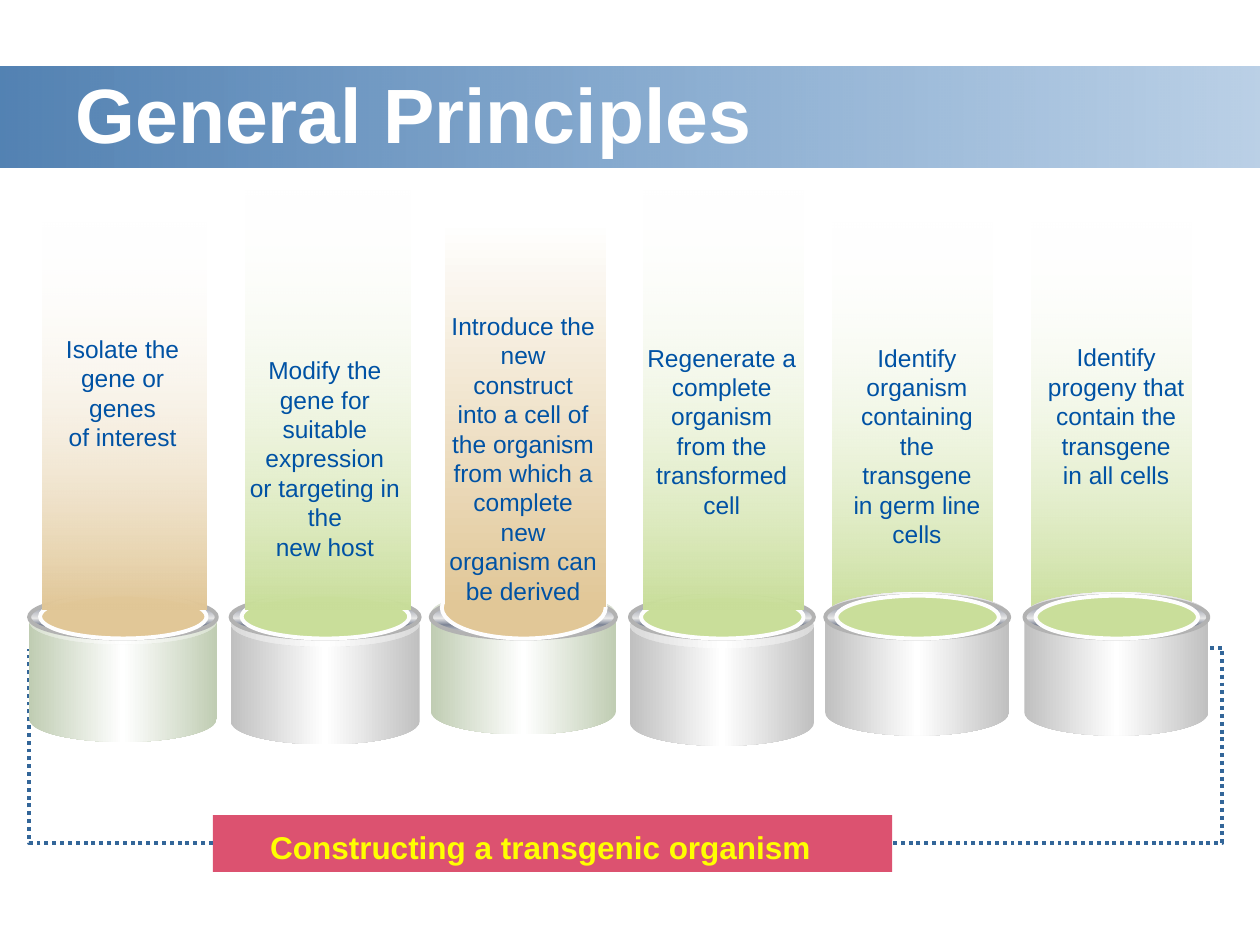
"""Build the slide on the general principles of constructing a transgenic organism."""
from dataclasses import dataclass

from lxml import etree
from pptx import Presentation
from pptx.dml.color import RGBColor
from pptx.enum import dml, shapes, text
from pptx.oxml import ns
from pptx.util import Pt

WHITE = RGBColor(0xFF, 0xFF, 0xFF)
RIM = RGBColor(0xFE, 0xFE, 0xFE)
NAVY = RGBColor(0x00, 0x47, 0x8F)
BLUE = RGBColor(0x00, 0x52, 0xA4)
DOT_BLUE = RGBColor(0x33, 0x66, 0x99)
ROSE = RGBColor(0xDC, 0x52, 0x70)
YELLOW = RGBColor(0xFF, 0xFF, 0x00)
GREEN = RGBColor(0xC9, 0xDE, 0x9A)
TAN = RGBColor(0xE1, 0xC7, 0x97)
SAGE = RGBColor(0xC0, 0xCD, 0xB3)
SILVER = RGBColor(0xC0, 0xC0, 0xC0)
PALE = RGBColor(0xE6, 0xE6, 0xE6)
STEEL = RGBColor(0x7D, 0x84, 0x96)
RING_EDGE = RGBColor(0xB2, 0xB2, 0xB2)

RIGHTWARD, DOWNWARD = 0, 270
RING_STOPS = [(0, PALE), (15, STEEL), (53, PALE), (68, STEEL), (93, PALE), (100, WHITE)]
CENTER = text.PP_ALIGN.CENTER


@dataclass
class Box:
    left: float
    top: float
    width: float
    height: float

    def lengths(self) -> list:
        return [Pt(v) for v in (self.left, self.top, self.width, self.height)]


@dataclass
class Step:
    left: float
    width: float
    can_top: float
    column_top: float
    column_bottom: float
    label_top: float
    label_height: float
    lines: list
    colour: RGBColor = GREEN
    can_colour: RGBColor = SILVER
    column_inset: float = 7.9
    cup_top: float = 340.4
    clear_top: bool = True
    column_behind: bool = False


STEPS = [
    Step(16.6, 107.3, 342, 126, 348.5, 187.2, 75,
         ["Isolate the gene or genes", "of interest"], TAN, SAGE, cup_top=339.8),
    Step(131.8, 108, 343.4, 108, 348.5, 199.4, 126,
         ["Modify the gene for", "suitable expression", "or targeting in the", "new host"],
         column_inset=8.6, cup_top=339.8),
    Step(246.2, 105.8, 337.7, 126, 347, 174.2, 177,
         ["Introduce the new construct", "into a cell of the organism",
          "from which a complete new", "organism can be derived"],
         TAN, SAGE, cup_top=329.8, clear_top=False),
    Step(360, 105.1, 344.2, 108, 348.5, 192.2, 109,
         ["Regenerate a complete", "organism from the", "transformed cell"]),
    Step(471.6, 105.1, 338.4, 126, 352.8, 192.2, 126,
         ["Identify organism", "containing the transgene", "in germ line cells"],
         column_inset=4.3, column_behind=True),
    Step(585.4, 105.1, 338.4, 126, 352.8, 192.2, 92,
         ["Identify progeny that", "contain the transgene", "in all cells"],
         column_inset=4.3, column_behind=True),
]


def add_filled(slide, kind, box: Box, fill, angle=RIGHTWARD, edge=None):
    """Draw a preset shape filled with a colour or with (position, colour[, alpha]) stops."""
    shape = slide.shapes.add_shape(kind, *box.lengths())
    shape.shadow.inherit = False
    if isinstance(fill, RGBColor):
        shape.fill.solid()
        shape.fill.fore_color.rgb = fill
    else:
        shape.fill.gradient()
        shape.fill.gradient_angle = angle
        stops = shape._element.spPr.find(".//" + ns.qn("a:gsLst"))
        for old in list(stops):
            stops.remove(old)
        for position, colour, *alpha in fill:
            stop = etree.SubElement(stops, ns.qn("a:gs"), pos=str(position * 1000))
            srgb = etree.SubElement(stop, ns.qn("a:srgbClr"), val=str(colour))
            for percent in alpha:
                etree.SubElement(srgb, ns.qn("a:alpha"), val=str(percent * 1000))
    if edge is None:
        shape.line.fill.background()
    else:
        shape.line.color.rgb = edge
        shape.line.width = Pt(2.25)
    return shape


def write(frame, lines: list, *, size: float, colour: RGBColor, bold=False, align=CENTER,
          anchor=text.MSO_ANCHOR.TOP, fit=text.MSO_AUTO_SIZE.SHAPE_TO_FIT_TEXT) -> None:
    """Put one paragraph per line into a text frame."""
    frame.word_wrap = True
    frame.auto_size = fit
    frame.vertical_anchor = anchor
    for index, line in enumerate(lines):
        paragraph = frame.paragraphs[0] if index == 0 else frame.add_paragraph()
        paragraph.alignment = align
        run = paragraph.add_run()
        run.text = line
        run.font.name = "Arial"
        run.font.size = Pt(size)
        run.font.bold = bold
        run.font.color.rgb = colour


def add_dotted_elbow(slide, start: tuple, end: tuple, preset: str, bend=None) -> None:
    """Draw a dotted bent connector between two points."""
    elbow = slide.shapes.add_connector(
        shapes.MSO_CONNECTOR.ELBOW, *(Pt(v) for v in start + end))
    elbow.line.color.rgb = DOT_BLUE
    elbow.line.width = Pt(2.25)
    elbow.line.dash_style = dml.MSO_LINE.ROUND_DOT
    properties = elbow._element.spPr
    etree.SubElement(properties, ns.qn("a:effectLst"))
    geometry = properties.find(ns.qn("a:prstGeom"))
    geometry.set("prst", preset)
    if bend is not None:
        guides = geometry.find(ns.qn("a:avLst"))
        etree.SubElement(guides, ns.qn("a:gd"), name="adj1", fmla=f"val {bend}")


def add_column(slide, step: Step) -> None:
    """Draw the fading column that rises from a can."""
    top_stop = (0, WHITE, 0) if step.clear_top else (0, WHITE)
    box = Box(step.left + step.column_inset, step.column_top,
              step.width - 13.7, step.column_bottom - step.column_top)
    add_filled(slide, shapes.MSO_SHAPE.RECTANGLE, box,
               [top_stop, (100, step.colour)], DOWNWARD)


def add_step(slide, step: Step) -> None:
    """Draw a can with its ring, cup, column and label."""
    if step.column_behind:
        add_column(slide, step)
    can = add_filled(slide, shapes.MSO_SHAPE.CAN, Box(step.left, step.can_top, step.width, 82),
                     [(0, step.can_colour), (50, WHITE), (100, step.can_colour)])
    can.adjustments[0] = 0.32
    add_filled(slide, shapes.MSO_SHAPE.OVAL, Box(step.left, 340.4, step.width, 24.5),
               RING_STOPS, DOWNWARD, RING_EDGE)
    add_filled(slide, shapes.MSO_SHAPE.OVAL,
               Box(step.left + 6.3, step.cup_top, step.width - 12.2, 364.9 - step.cup_top),
               step.colour, edge=RIM)
    if not step.column_behind:
        add_column(slide, step)
    label = slide.shapes.add_textbox(
        *Box(step.left + 2.7, step.label_top, step.width - 5.7, step.label_height).lengths())
    write(label.text_frame, step.lines, size=14, colour=BLUE)


def main() -> None:
    """Assemble and save the slide."""
    deck = Presentation()
    deck.slide_width, deck.slide_height = Pt(720), Pt(540)
    slide = deck.slides.add_slide(deck.slide_layouts[5])

    add_filled(slide, shapes.MSO_SHAPE.RECTANGLE, Box(0, 38.2, 720, 57.6),
               [(0, NAVY, 68), (100, BLUE, 27)])
    heading = slide.shapes.title
    heading.left, heading.top, heading.width, heading.height = Box(36, 19.4, 468, 90).lengths()
    write(heading.text_frame, ["General Principles"], size=44, colour=WHITE, bold=True,
          align=text.PP_ALIGN.LEFT, anchor=text.MSO_ANCHOR.MIDDLE,
          fit=text.MSO_AUTO_SIZE.NONE)
    slide.shapes._spTree.append(heading._element)

    banner = add_filled(slide, shapes.MSO_SHAPE.ROUNDED_RECTANGLE,
                        Box(121.7, 465.8, 388.1, 32.4), ROSE)
    banner.adjustments[0] = 0
    add_dotted_elbow(slide, (121.7, 481.7), (16.6, 370.8), "bentConnector2")
    add_dotted_elbow(slide, (678.2, 370.1), (509.8, 481.7), "bentConnector3", -12100)
    caption = slide.shapes.add_textbox(*Box(144, 469.4, 329.8, 28.8).lengths())
    write(caption.text_frame, ["Constructing a transgenic organism"],
          size=18, colour=YELLOW, bold=True)

    for step in STEPS:
        add_step(slide, step)
    deck.save("out.pptx")


if __name__ == "__main__":
    main()
